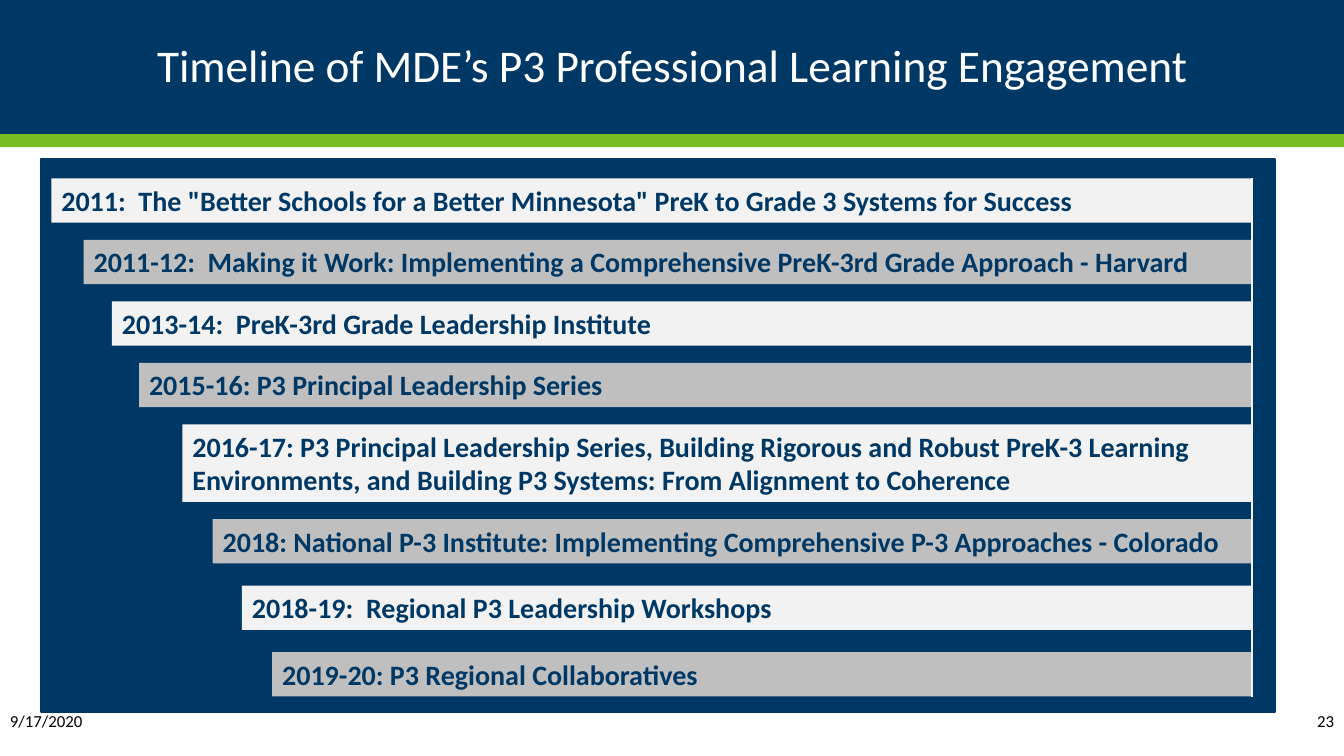
from dataclasses import dataclass

from lxml import etree
from pptx import Presentation
from pptx.dml.color import RGBColor
from pptx.enum.shapes import MSO_CONNECTOR, MSO_SHAPE
from pptx.enum.text import MSO_ANCHOR, MSO_AUTO_SIZE, PP_ALIGN
from pptx.oxml.ns import qn
from pptx.util import Inches, Pt

RECTANGLE = MSO_SHAPE.RECTANGLE
STRAIGHT = MSO_CONNECTOR.STRAIGHT
TOP, MIDDLE = MSO_ANCHOR.TOP, MSO_ANCHOR.MIDDLE
LEFT, CENTER, RIGHT = PP_ALIGN.LEFT, PP_ALIGN.CENTER, PP_ALIGN.RIGHT
NO_AUTOFIT = MSO_AUTO_SIZE.NONE
TITLE_ONLY = 5

SLIDE_WIDTH, SLIDE_HEIGHT = 13.33, 7.5
BARS_TOP, BARS_RIGHT = 1.77, 12.42
BAR_HEIGHT, TALL_BAR_HEIGHT = 0.44, 0.77
GAP, WIDE_GAP = 0.17, 0.22

# Left edge, height, gap below, text
MILESTONES = [
    (0.51, BAR_HEIGHT, GAP,
     '2011:  The "Better Schools for a Better Minnesota" PreK to Grade 3 Systems for Success'),
    (0.83, BAR_HEIGHT, GAP,
     "2011-12:  Making it Work: Implementing a Comprehensive PreK-3rd Grade Approach - Harvard"),
    (1.11, BAR_HEIGHT, GAP, "2013-14:  PreK-3rd Grade Leadership Institute"),
    (1.38, BAR_HEIGHT, GAP, "2015-16: P3 Principal Leadership Series"),
    (1.81, TALL_BAR_HEIGHT, GAP,
     "2016-17: P3 Principal Leadership Series, Building Rigorous and Robust PreK-3 Learning "
     "Environments, and Building P3 Systems: From Alignment to Coherence"),
    (2.11, BAR_HEIGHT, WIDE_GAP,
     "2018: National P-3 Institute: Implementing Comprehensive P-3 Approaches - Colorado"),
    (2.4, BAR_HEIGHT, WIDE_GAP, "2018-19:  Regional P3 Leadership Workshops"),
    (2.7, BAR_HEIGHT, 0, "2019-20: P3 Regional Collaboratives"),
]


@dataclass(frozen=True)
class Theme:
    font: str = "Calibri"
    navy: RGBColor = RGBColor(0x00, 0x38, 0x65)
    green: RGBColor = RGBColor(0x78, 0xBE, 0x21)
    light: RGBColor = RGBColor(0xF2, 0xF2, 0xF2)
    gray: RGBColor = RGBColor(0xBF, 0xBF, 0xBF)
    white: RGBColor = RGBColor(0xFF, 0xFF, 0xFF)
    black: RGBColor = RGBColor(0x00, 0x00, 0x00)
    title_size: float = 32.4
    bar_size: float = 20
    footer_size: float = 12
    line_width: float = 1.5


class SlideBuilder:
    def __init__(self, slide, theme):
        self.slide = slide
        self.theme = theme

    def set_text(self, shape, text, size, color, align=LEFT, anchor=MIDDLE, bold=False):
        frame = shape.text_frame
        frame.text = text
        frame.word_wrap = True
        frame.auto_size = NO_AUTOFIT
        frame.vertical_anchor = anchor
        paragraph = frame.paragraphs[0]
        paragraph.alignment = align
        font = paragraph.font
        font.name, font.size, font.bold = self.theme.font, Pt(size), bold
        font.color.rgb = color
        return paragraph

    def rectangle(self, left, top, width, height, fill, outline=None):
        shape = self.slide.shapes.add_shape(
            RECTANGLE, Inches(left), Inches(top), Inches(width), Inches(height))
        shape.shadow.inherit = False
        shape.fill.solid()
        shape.fill.fore_color.rgb = fill
        if outline is None:
            shape.line.fill.background()
        else:
            shape.line.color.rgb = outline
            shape.line.width = Pt(self.theme.line_width)
        return shape

    def title(self, text, left, top, width, height):
        """Fill the title placeholder and bring it in front of what is drawn so far."""
        title = self.slide.shapes.title
        title.left, title.top = Inches(left), Inches(top)
        title.width, title.height = Inches(width), Inches(height)
        paragraph = self.set_text(title, text, self.theme.title_size, self.theme.white, CENTER)
        paragraph.line_spacing = 0.9
        title.element.getparent().append(title.element)

    def footer(self, text, left, width, align):
        box = self.slide.shapes.add_textbox(
            Inches(left), Inches(6.95), Inches(width), Inches(0.4))
        self.set_text(box, text, self.theme.footer_size, self.theme.black, align)

    def milestone(self, text, left, top, height, fill):
        bar = self.rectangle(left, top, BARS_RIGHT - left, height, fill)
        self.set_text(bar, text, self.theme.bar_size, self.theme.navy, anchor=TOP, bold=True)

    def vertical_line(self, x, top, bottom, color):
        line = self.slide.shapes.add_connector(
            STRAIGHT, Inches(x), Inches(top), Inches(x), Inches(bottom))
        line.line.color.rgb = color
        line.line.width = Pt(self.theme.line_width)
        etree.SubElement(line.element.spPr, qn("a:effectLst"))


def main():
    presentation = Presentation()
    presentation.slide_width = Inches(SLIDE_WIDTH)
    presentation.slide_height = Inches(SLIDE_HEIGHT)
    slide = presentation.slides.add_slide(presentation.slide_layouts[TITLE_ONLY])
    theme = Theme()
    builder = SlideBuilder(slide, theme)

    builder.rectangle(0, 0, SLIDE_WIDTH, 1.33, theme.navy)
    builder.rectangle(0, 1.33, SLIDE_WIDTH, 0.13, theme.green)
    builder.rectangle(0.41, 1.58, 12.24, 5.48, theme.navy, outline=theme.navy)
    builder.title("Timeline of MDE’s P3 Professional Learning Engagement", 0.92, 0.17, 11.5, 1)
    builder.footer("9/17/2020", 0, 1.49, LEFT)
    builder.footer("23", 11.73, 1.6, RIGHT)

    top = BARS_TOP
    for index, (left, height, gap, text) in enumerate(MILESTONES):
        fill = theme.gray if index % 2 else theme.light
        builder.milestone(text, left, top, height, fill)
        top += height + gap
    builder.vertical_line(BARS_RIGHT, BARS_TOP, top, theme.light)

    presentation.save("out.pptx")


if __name__ == "__main__":
    main()
